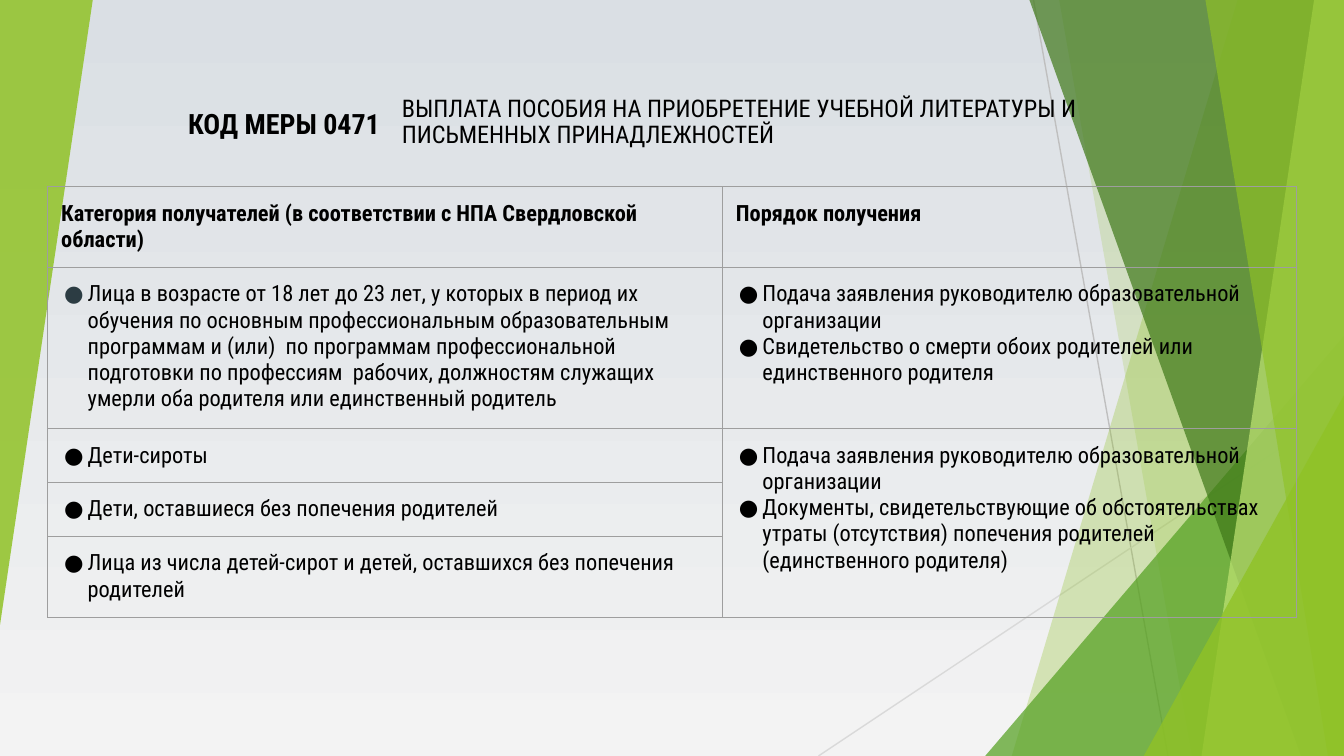
from lxml.etree import SubElement
from pptx import Presentation
from pptx.dml.color import RGBColor
from pptx.enum.shapes import MSO_CONNECTOR, MSO_SHAPE
from pptx.enum.text import MSO_ANCHOR, PP_ALIGN
from pptx.oxml import parse_xml
from pptx.oxml.ns import nsdecls, qn
from pptx.util import Pt

W, H = 720, 405
FONT = "Roboto Condensed"
BLACK = RGBColor(0x00, 0x00, 0x00)
SLATE = RGBColor(0x2C, 0x3C, 0x43)
BORDER = RGBColor(0x9E, 0x9E, 0x9E)
SILVER = RGBColor(0xBF, 0xBF, 0xBF)
LIGHT = RGBColor(0xD9, 0xD9, 0xD9)
LIME = RGBColor(0x90, 0xC2, 0x26)
GREEN = RGBColor(0x54, 0xA0, 0x21)
FOREST = RGBColor(0x3F, 0x78, 0x19)
PALE = RGBColor(0xC0, 0xE4, 0x74)
BG_TOP = RGBColor(0xDA, 0xDF, 0xE4)
BG_BOTTOM = RGBColor(0xF3, 0xF3, 0xF3)


def paint(sp, color, alpha):
    """Fill a borderless shape with a colour at alpha percent opacity."""
    sp.shadow.inherit = False
    sp.line.fill.background()
    sp.fill.solid()
    sp.fill.fore_color.rgb = color
    clr = sp.fill._xPr.find(qn("a:solidFill"))[0]
    SubElement(clr, qn("a:alpha"), val=str(alpha * 1000))


def write(p, text, size, bold):
    r = p.add_run()
    r.text = text
    for name, value in {"name": FONT, "size": Pt(size), "bold": bold}.items():
        setattr(r.font, name, value)
    r.font.color.rgb = BLACK


prs = Presentation()
prs.slide_width, prs.slide_height = Pt(W), Pt(H)
s = prs.slides.add_slide(prs.slide_layouts[6])

# Background
fill = s.background.fill
fill.gradient()
fill.gradient_angle = 270
for stop, color in zip(fill.gradient_stops, (BG_TOP, BG_BOTTOM)):
    stop.color.rgb = color

# Thin lines behind the green panels
for x1, y1, x2, y2, color in ((553.7, 0, 625.7, H, SILVER),
                              (W, 217.4, 438.5, H, LIGHT)):
    line = s.shapes.add_connector(MSO_CONNECTOR.STRAIGHT,
                                  Pt(x1), Pt(y1), Pt(x2), Pt(y2))
    line.line.color.rgb = color
    line.line.width = Pt(0.75)
    SubElement(line._element.spPr, qn("a:effectLst"))

# Right panels: a band has a top and a bottom x, a triangle a left x and a top y
PANELS = (
    ("band", 663, 542, LIME, 30),
    ("band", 567.4, 638.6, LIME, 20),
    ("triangle", 527.8, 180, GREEN, 72),
    ("band", 551.5, 697, FOREST, 70),
    ("band", 704, 643.7, PALE, 70),
    ("band", 645.8, 711.4, LIME, 65),
    ("triangle", 612.7, 211.7, LIME, 80),
)
for kind, a, b, color, alpha in PANELS:
    if kind == "band":
        fb = s.shapes.build_freeform(Pt(a), 0)
        fb.add_line_segments([(Pt(W), 0), (Pt(W), Pt(H)), (Pt(b), Pt(H))])
        sp = fb.convert_to_shape()
    else:
        sp = s.shapes.add_shape(MSO_SHAPE.ISOSCELES_TRIANGLE,
                                Pt(a), Pt(b), Pt(W - a), Pt(H - b))
        sp.adjustments[0] = 1
    paint(sp, color, alpha)

# Left panel
sp = s.shapes.add_shape(MSO_SHAPE.ISOSCELES_TRIANGLE, 0, 0, Pt(49.7), Pt(334.8))
sp.adjustments[0] = 1
sp.rotation = 180
paint(sp, LIME, 85)

# Heading
HEADING = (
    (210.2, 453.6, 5.1, 2.6, 13, False, PP_ALIGN.LEFT, 0.9,
     "ВЫПЛАТА ПОСОБИЯ НА ПРИОБРЕТЕНИЕ УЧЕБНОЙ ЛИТЕРАТУРЫ И "
     "ПИСЬМЕННЫХ ПРИНАДЛЕЖНОСТЕЙ"),
    (58.8, 151.9, 7.2, 7.2, 15, True, PP_ALIGN.RIGHT, 1.0, "КОД МЕРЫ 0471"),
)
for x, w, side, edge, size, bold, align, spacing, text in HEADING:
    tf = s.shapes.add_textbox(Pt(x), Pt(38.2), Pt(w), Pt(55.4)).text_frame
    for name, value in {"word_wrap": True, "vertical_anchor": MSO_ANCHOR.MIDDLE,
                        "margin_left": Pt(side), "margin_right": Pt(side),
                        "margin_top": Pt(edge), "margin_bottom": Pt(edge)}.items():
        setattr(tf, name, value)
    p = tf.paragraphs[0]
    p.alignment, p.line_spacing = align, spacing
    write(p, text, size, bold)

# Table
APPLICATION = "Подача заявления руководителю образовательной организации"
ROWS = (
    (["Категория получателей (в соответствии с НПА Свердловской области)"],
     ["Порядок получения"]),
    (["Лица в возрасте от 18 лет до 23 лет, у которых в период их обучения "
      "по основным профессиональным образовательным программам и (или)  по "
      "программам профессиональной подготовки по профессиям  рабочих, "
      "должностям служащих умерли оба родителя или единственный родитель"],
     [APPLICATION, "Свидетельство о смерти обоих родителей или единственного родителя"]),
    (["Дети-сироты"],
     [APPLICATION, "Документы, свидетельствующие об обстоятельствах утраты "
      "(отсутствия) попечения родителей (единственного родителя)"]),
    (["Дети, оставшиеся без попечения родителей"], []),
    (["Лица из числа детей-сирот и детей, оставшихся без попечения родителей"], []),
)
COL_WIDTHS = (361.5, 307.5)
ROW_HEIGHTS = (42.5, 84.7, 28.4, 28.4, 42.4)

table = s.shapes.add_table(len(ROWS), len(COL_WIDTHS), Pt(25.6), Pt(100.1),
                           Pt(sum(COL_WIDTHS)), Pt(sum(ROW_HEIGHTS))).table
table.first_row = table.horz_banding = False
for col, w in zip(table.columns, COL_WIDTHS):
    col.width = Pt(w)
for row, h in zip(table.rows, ROW_HEIGHTS):
    row.height = Pt(h)
table.cell(2, 1).merge(table.cell(4, 1))

for i, row in enumerate(ROWS):
    for j, texts in enumerate(row):
        cell = table.cell(i, j)
        for side in ("left", "right", "top", "bottom"):
            setattr(cell, f"margin_{side}", Pt(7.2))
        cell.fill.background()
        tcPr = cell._tc.get_or_add_tcPr()
        for k, tag in enumerate(("lnL", "lnR", "lnT", "lnB")):
            tcPr.insert(k, parse_xml(
                f'<a:{tag} {nsdecls("a")} w="{Pt(0.75)}"><a:solidFill>'
                f'<a:srgbClr val="{BORDER}"/></a:solidFill></a:{tag}>'))
        for k, text in enumerate(texts):
            p = cell.text_frame.paragraphs[0] if k == 0 else cell.text_frame.add_paragraph()
            write(p, text, 12, i == 0)
            if i > 0:
                pPr = p._p.get_or_add_pPr()
                pPr.set("marL", str(Pt(14.2)))
                pPr.set("indent", str(-Pt(12.7)))
                clr = SubElement(pPr, qn("a:buClr"))
                SubElement(clr, qn("a:srgbClr"),
                           val=str(SLATE if (i, j) == (1, 0) else BLACK))
                SubElement(pPr, qn("a:buFont"), typeface=FONT)
                SubElement(pPr, qn("a:buChar"), char="●")

prs.save("out.pptx")
